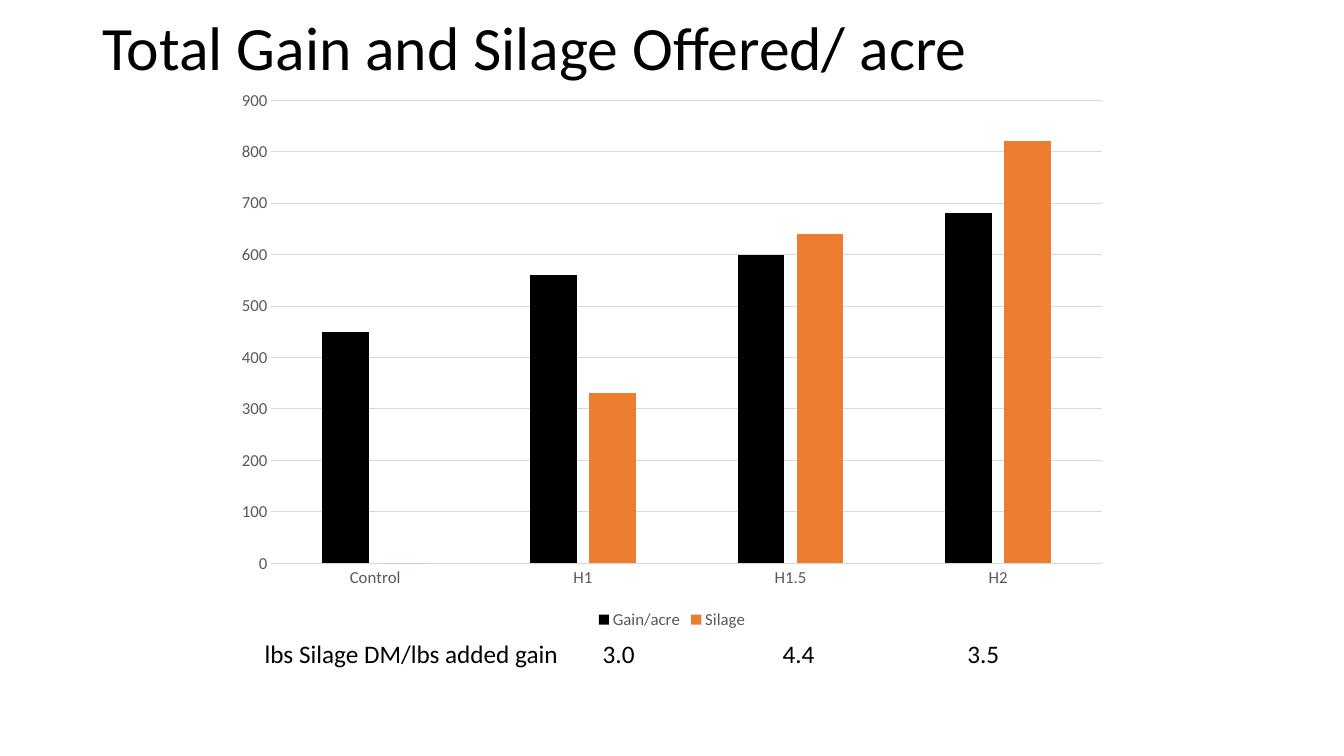
from lxml.etree import SubElement
from pptx import Presentation
from pptx.chart.data import CategoryChartData
from pptx.dml.color import RGBColor
from pptx.enum.chart import XL_CHART_TYPE, XL_LEGEND_POSITION, XL_TICK_MARK
from pptx.enum.text import MSO_ANCHOR
from pptx.oxml.ns import qn
from pptx.util import Pt

FONT = "Calibri"
BLACK, ORANGE, GRAY, RULE = "000000", "ED7D31", "595959", "D9D9D9"
TREATMENTS = ["Control", "H1", "H1.5", "H2"]
SERIES = [
    ("Gain/acre", [450, 560, 600, 680], BLACK),
    ("Silage", [0, 330, 640, 820], ORANGE),
]
RATIOS = [("3.0", 241.5), ("4.4", 370), ("3.5", 502)]


def color(value):
    return RGBColor.from_string(value)


def style_font(font, size, value):
    font.name = FONT
    font.size = Pt(size)
    font.color.rgb = color(value)


def style_line(line, value):
    line.color.rgb = color(value)
    line.width = Pt(0.75)


def add_text_box(page, left, top, width, height):
    box = page.shapes.add_textbox(Pt(left), Pt(top), Pt(width), Pt(height))
    box.text_frame.word_wrap = True
    return box.text_frame


def add_title(page, left, top, width, height):
    frame = add_text_box(page, left, top, width, height)
    frame.vertical_anchor = MSO_ANCHOR.MIDDLE
    para = frame.paragraphs[0]
    para.text = "Total Gain and Silage Offered/ acre"
    para.line_spacing = 0.9
    style_font(para.font, 44, BLACK)


def add_ratio_row(page, left, top, width, height):
    frame = add_text_box(page, left, top, width, height)
    frame.margin_left = Pt(43.5)
    para = frame.paragraphs[0]
    para.text = "\t".join(["lbs Silage DM/lbs added gain"] + [ratio for ratio, _ in RATIOS])
    tabs = SubElement(para._p.get_or_add_pPr(), qn("a:tabLst"))
    for _, position in RATIOS:
        SubElement(tabs, qn("a:tab"), pos=str(Pt(position)), algn="l")
    style_font(para.font, 18, BLACK)


def add_gain_chart(page, left, top, width, height):
    data = CategoryChartData()
    data.categories = TREATMENTS
    for name, values, _ in SERIES:
        data.add_series(name, values)
    chart = page.shapes.add_chart(
        XL_CHART_TYPE.COLUMN_CLUSTERED, Pt(left), Pt(top), Pt(width), Pt(height), data
    ).chart
    chart.has_title = False
    style_font(chart.font, 10, BLACK)

    plot = chart.plots[0]
    plot.gap_width = 219
    plot.overlap = -27
    plot.vary_by_categories = False
    for series, (_, _, fill) in zip(plot.series, SERIES):
        series.format.fill.solid()
        series.format.fill.fore_color.rgb = color(fill)

    for axis in (chart.category_axis, chart.value_axis):
        axis.major_tick_mark = XL_TICK_MARK.NONE
        axis.minor_tick_mark = XL_TICK_MARK.NONE
        style_font(axis.tick_labels.font, 12, GRAY)
    style_line(chart.category_axis.format.line, RULE)

    value_axis = chart.value_axis
    value_axis.minimum_scale = 0
    value_axis.maximum_scale = 900
    value_axis.major_unit = 100
    value_axis.format.line.fill.background()
    style_line(value_axis.major_gridlines.format.line, RULE)

    chart.has_legend = True
    chart.legend.position = XL_LEGEND_POSITION.BOTTOM
    chart.legend.include_in_layout = False
    style_font(chart.legend.font, 12, GRAY)


def main():
    deck = Presentation()
    deck.slide_width, deck.slide_height = Pt(960), Pt(540)
    page = deck.slides.add_slide(deck.slide_layouts[6])
    add_title(page, 66, 0, 828, 72.5)
    add_ratio_row(page, 145.5, 452.5, 656, 29)
    add_gain_chart(page, 160, 56.6, 640, 396)
    deck.save("out.pptx")


if __name__ == "__main__":
    main()
